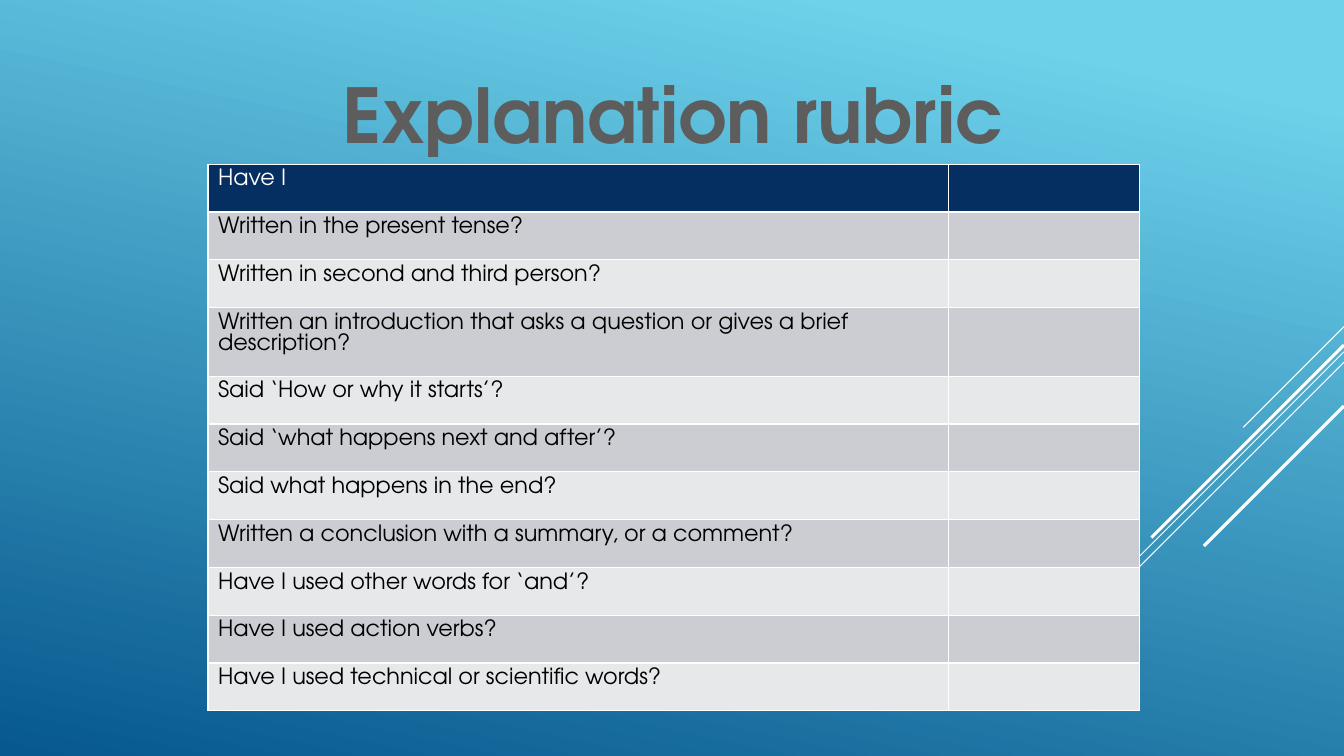
from dataclasses import dataclass

from lxml.etree import SubElement
from pptx import Presentation
from pptx.dml.color import RGBColor
from pptx.enum.text import MSO_ANCHOR, MSO_AUTO_SIZE, PP_ALIGN
from pptx.oxml.ns import qn
from pptx.slide import Slide
from pptx.table import _Cell
from pptx.util import Pt

FONT = "TeX Gyre Adventor"
WHITE, BLACK, GREY = "FFFFFF", "000000", "5D5D5D"
NAVY, BAND_DARK, BAND_LIGHT = "052F61", "CCCDD2", "E7E8EA"
SLIDE_WIDTH, SLIDE_HEIGHT = 960, 540
ROW_HEIGHT, TALL_ROW_HEIGHT = 34.15, 49.1
TALL_ROW = 3
COLUMN_WIDTHS = (528.8, 136.4)


@dataclass
class Streak:
    top: float
    run: float
    weight: float


STREAKS = [
    Streak(233.3, 72, 0.75),
    Streak(251.3, 234.7, 0.75),
    Streak(258.7, 149, 0.75),
    Streak(246.5, 137.5, 2.25),
    Streak(290, 100, 2.25),
]

QUESTIONS = [
    "Have I",
    "Written in the present tense?",
    "Written in second and third person?",
    "Written an introduction that asks a question or gives a brief description?",
    "Said ‘How or why it starts’?",
    "Said ‘what happens next and after’?",
    "Said what happens in the end?",
    "Written a conclusion with a summary, or a comment?",
    "Have I used other words for ‘and’?",
    "Have I used action verbs?",
    "Have I used technical or scientific words?",
]


def color(value: str) -> RGBColor:
    return RGBColor.from_string(value)


def paint_background(s: Slide) -> None:
    fill = s.background.fill
    fill.gradient()
    fill.gradient_angle = 258
    for stop, (position, value) in zip(
        fill.gradient_stops, [(0.1, "6ED2EB"), (1, "06588E")]
    ):
        stop.position = position
        stop.color.rgb = color(value)


def draw_streak(s: Slide, streak: Streak) -> None:
    line = s.shapes.add_connector(
        1,
        Pt(SLIDE_WIDTH),
        Pt(streak.top),
        Pt(SLIDE_WIDTH - streak.run),
        Pt(streak.top + streak.run),
    )
    line.line.color.rgb = color(WHITE)
    line.line.width = Pt(streak.weight)
    SubElement(line._element.spPr, qn("a:effectLst"))


def write_title(s: Slide, text: str) -> None:
    sp = s.shapes.title
    sp.left, sp.top, sp.width, sp.height = Pt(235.4), Pt(44.6), Pt(491), Pt(72.7)
    tf = sp.text_frame
    tf.text = text
    tf.word_wrap = False
    tf.auto_size = MSO_AUTO_SIZE.SHAPE_TO_FIT_TEXT
    tf.vertical_anchor = MSO_ANCHOR.TOP
    p = tf.paragraphs[0]
    p.alignment = PP_ALIGN.CENTER
    p.font.name, p.font.size, p.font.bold = FONT, Pt(54), True
    p.font.color.rgb = color(GREY)


def style_cell(cell: _Cell, fill: str, text_color: str) -> None:
    p = cell.text_frame.paragraphs[0]
    p.line_spacing = Pt(15)
    p.font.name, p.font.size = FONT, Pt(16)
    p.font.bold = False
    p.font.color.rgb = color(text_color)
    properties = cell._tc.get_or_add_tcPr()
    for side in ("a:lnL", "a:lnR", "a:lnT", "a:lnB"):
        border = SubElement(properties, qn(side), w=str(Pt(1)))
        solid = SubElement(border, qn("a:solidFill"))
        SubElement(solid, qn("a:srgbClr"), val=WHITE)
    cell.fill.solid()
    cell.fill.fore_color.rgb = color(fill)


def draw_rubric(s: Slide) -> None:
    frame = s.shapes.add_table(
        len(QUESTIONS),
        len(COLUMN_WIDTHS),
        Pt(148.6),
        Pt(117.3),
        Pt(sum(COLUMN_WIDTHS)),
        Pt(ROW_HEIGHT * (len(QUESTIONS) - 1) + TALL_ROW_HEIGHT),
    )
    table = frame.table
    for column, width in zip(table.columns, COLUMN_WIDTHS):
        column.width = Pt(width)
    for i, (row, question) in enumerate(zip(table.rows, QUESTIONS)):
        row.height = Pt(TALL_ROW_HEIGHT if i == TALL_ROW else ROW_HEIGHT)
        row.cells[0].text = question
        fill = NAVY if i == 0 else BAND_DARK if i % 2 else BAND_LIGHT
        for cell in row.cells:
            style_cell(cell, fill, BLACK if i else WHITE)


def main() -> None:
    prs = Presentation()
    prs.slide_width, prs.slide_height = Pt(SLIDE_WIDTH), Pt(SLIDE_HEIGHT)
    s = prs.slides.add_slide(prs.slide_layouts[5])
    paint_background(s)
    for streak in STREAKS:
        draw_streak(s, streak)
    draw_rubric(s)
    write_title(s, "Explanation rubric")
    prs.save("out.pptx")


if __name__ == "__main__":
    main()
